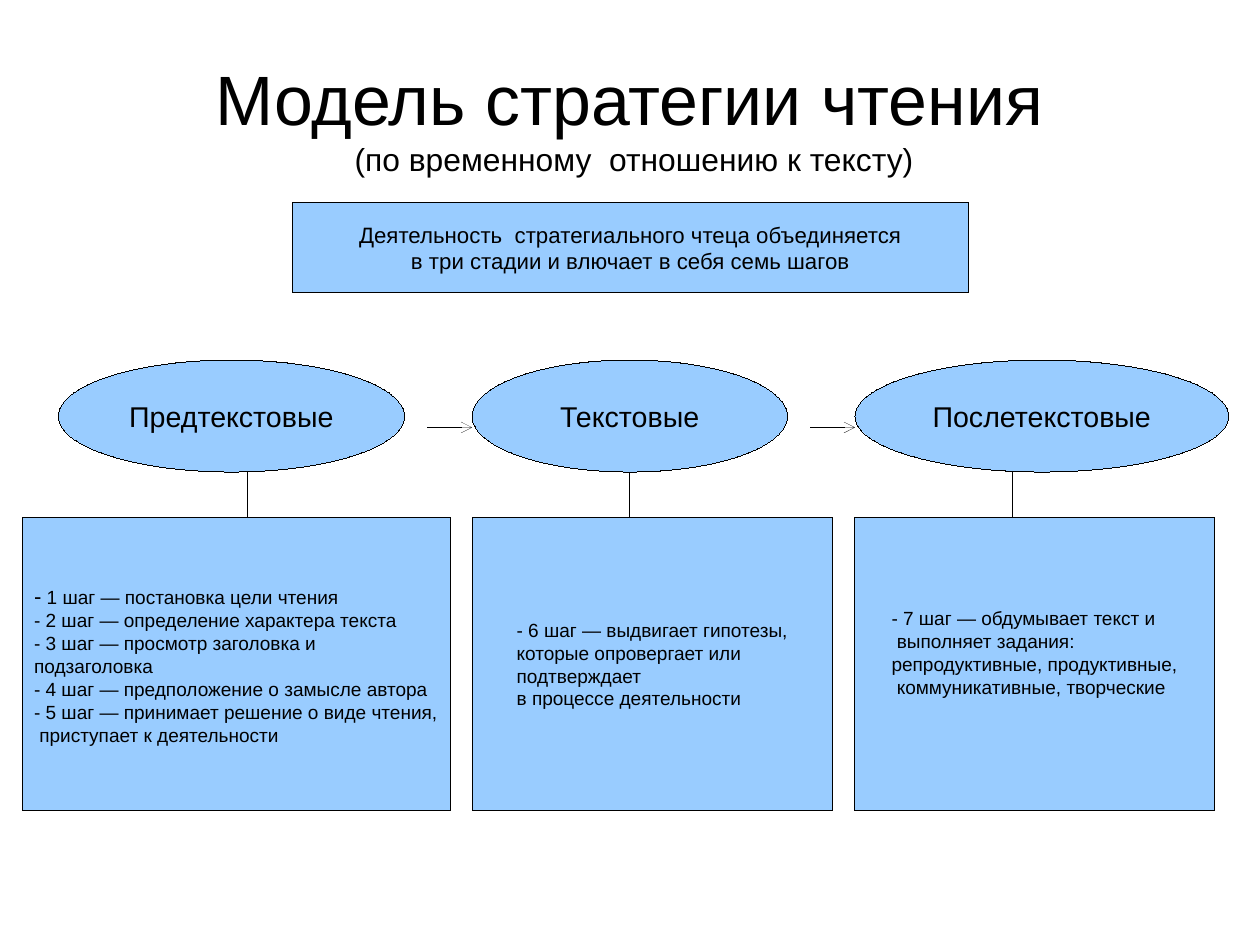
from lxml.etree import SubElement
from pptx import Presentation
from pptx.dml.color import RGBColor
from pptx.enum.shapes import MSO_CONNECTOR, MSO_SHAPE
from pptx.enum.text import MSO_ANCHOR, MSO_AUTO_SIZE, PP_ALIGN
from pptx.oxml.ns import qn
from pptx.util import Inches, Pt

TITLE = "Модель стратегии чтения"
SUBTITLE = " (по временному  отношению к тексту)"
SUMMARY = [
    "Деятельность  стратегиального чтеца объединяется",
    "в три стадии и влючает в себя семь шагов",
]
STAGES = [
    {"name": "Предтекстовые", "oval": (0.51, 3.03), "box": (0.2, 3.74),
     "stem": 2.17, "indent": 0.1, "bottom": 0.05,
     "steps": ["- 1 шаг — постановка цели чтения",
               "- 2 шаг — определение характера текста",
               "- 3 шаг — просмотр заголовка и подзаголовка",
               "- 4 шаг — предположение о замысле автора",
               "- 5 шаг — принимает решение о виде чтения,",
               " приступает к деятельности"]},
    {"name": "Текстовые", "oval": (4.13, 2.76), "box": (4.13, 3.15),
     "stem": 5.51, "indent": 0.39, "bottom": 0.05,
     "steps": ["- 6 шаг — выдвигает гипотезы,",
               "которые опровергает или",
               "подтверждает",
               "в процессе деятельности"]},
    {"name": "Послетекстовые", "oval": (7.48, 3.27), "box": (7.48, 3.15),
     "stem": 8.86, "indent": 0.32, "bottom": 0.25,
     "steps": ["- 7 шаг — обдумывает текст и",
               " выполняет задания:",
               "репродуктивные, продуктивные,",
               " коммуникативные, творческие"]},
]
COLORS = {"fill": "99CCFF", "ink": "000000"}
FONT = "Arial"
CM_PER_INCH = 2.54
SLIDE_WIDTH, SLIDE_HEIGHT = 28 / CM_PER_INCH, 21 / CM_PER_INCH
OVAL_TOP, OVAL_HEIGHT = 3.15, 0.98
OVAL_BOTTOM = OVAL_TOP + OVAL_HEIGHT
BOX_TOP, BOX_HEIGHT = 4.53, 2.56
ARROW_Y, ARROW_LENGTH = 3.74, 0.39


def rgb(name):
    return RGBColor.from_string(COLORS[name])


def style_font(font, size):
    font.name = FONT
    font.size = Pt(size)
    font.color.rgb = rgb("ink")


def draw_hairline(part):
    part.line.color.rgb = rgb("ink")
    outline = part._element.spPr.find(qn("a:ln"))
    outline.set("w", "0")
    return outline


def add_panel(slide, kind, place, lines, size, align=PP_ALIGN.CENTER):
    panel = slide.shapes.add_shape(kind, *map(Inches, place))
    panel.shadow.inherit = False
    panel.fill.solid()
    panel.fill.fore_color.rgb = rgb("fill")
    draw_hairline(panel)
    frame = panel.text_frame
    frame.word_wrap = True
    frame.vertical_anchor = MSO_ANCHOR.MIDDLE
    for number, line in enumerate(lines):
        paragraph = frame.add_paragraph() if number else frame.paragraphs[0]
        paragraph.add_run().text = line
        paragraph.alignment = align
        style_font(paragraph.font, size)
    return frame


def add_line(slide, start, end, arrow=False):
    line = slide.shapes.add_connector(
        MSO_CONNECTOR.STRAIGHT, *map(Inches, start + end))
    outline = draw_hairline(line)
    if arrow:
        SubElement(outline, qn("a:tailEnd"), type="arrow")
    SubElement(line._element.spPr, qn("a:effectLst"))


def add_title(slide):
    title = slide.shapes.title
    title.left, title.top, title.width, title.height = map(
        Inches, (0.55, 0.33, 9.92, 1.38))
    frame = title.text_frame
    frame.margin_left = frame.margin_right = 0
    frame.margin_top = frame.margin_bottom = 0
    frame.word_wrap = True
    frame.auto_size = MSO_AUTO_SIZE.NONE
    frame.vertical_anchor = MSO_ANCHOR.MIDDLE
    heading = frame.paragraphs[0]
    heading.alignment = PP_ALIGN.CENTER
    style_font(heading.font, 44)
    heading.add_run().text = TITLE
    heading.add_line_break()
    subtitle = heading.add_run()
    subtitle.text = SUBTITLE
    subtitle.font.size = Pt(20)


def add_stage(slide, stage, first):
    oval_left, oval_width = stage["oval"]
    box_left, box_width = stage["box"]
    add_panel(slide, MSO_SHAPE.OVAL,
              (oval_left, OVAL_TOP, oval_width, OVAL_HEIGHT), [stage["name"]], 18)
    steps = add_panel(slide, MSO_SHAPE.RECTANGLE,
                      (box_left, BOX_TOP, box_width, BOX_HEIGHT),
                      stage["steps"], 12, PP_ALIGN.LEFT)
    steps.margin_left = Inches(stage["indent"])
    steps.margin_bottom = Inches(stage["bottom"])
    add_line(slide, (stage["stem"], OVAL_BOTTOM), (stage["stem"], BOX_TOP))
    if first:
        opening = steps.paragraphs[0]
        dash = opening.runs[0]
        dash.text = "-"
        dash.font.size = Pt(14)
        opening.add_run().text = stage["steps"][0][1:]
    else:
        add_line(slide, (oval_left - ARROW_LENGTH, ARROW_Y),
                 (oval_left, ARROW_Y), arrow=True)


def main():
    deck = Presentation()
    deck.slide_width = Inches(SLIDE_WIDTH)
    deck.slide_height = Inches(SLIDE_HEIGHT)
    slide = deck.slides.add_slide(deck.slide_layouts[5])
    add_title(slide)
    add_panel(slide, MSO_SHAPE.RECTANGLE, (2.56, 1.77, 5.91, 0.79), SUMMARY, 14)
    for number, stage in enumerate(STAGES):
        add_stage(slide, stage, first=number == 0)
    deck.save("out.pptx")


if __name__ == "__main__":
    main()
